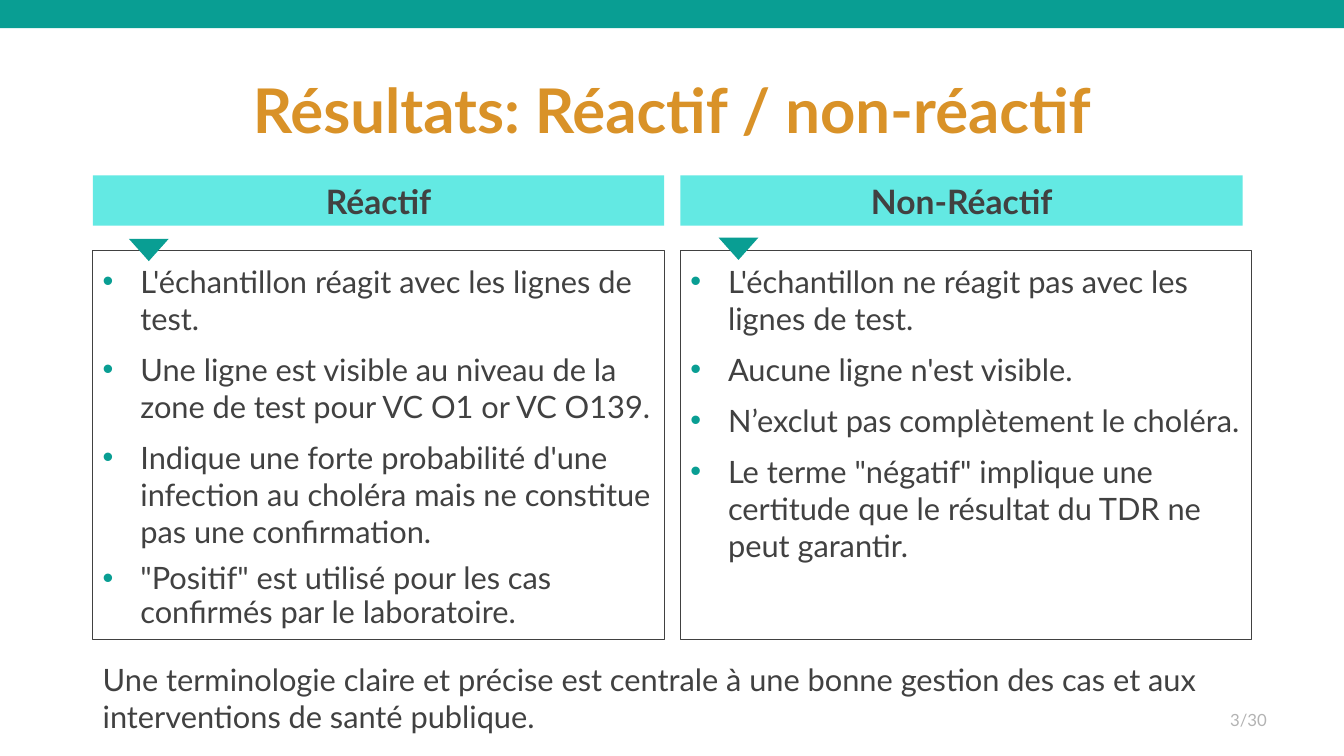
from dataclasses import dataclass

from lxml import etree
from pptx import Presentation
from pptx import util as u
from pptx.dml.color import RGBColor
from pptx.enum import shapes, text
from pptx.oxml import ns

TEAL = RGBColor(0x09, 0x9E, 0x93)
AQUA = RGBColor(0x63, 0xE9, 0xE3)
ORANGE = RGBColor(0xD9, 0x92, 0x28)
DARK = RGBColor(0x41, 0x41, 0x41)
GREY = RGBColor(0xB3, 0xB3, 0xB3)
FONT = "Lato"

SLIDE_WIDTH, SLIDE_HEIGHT = 33.87, 19.05
LEFT = 2.34
PANEL_WIDTH = 14.4
BULLET_INDENT = u.Cm(0.95)


@dataclass
class Panel:
    heading: str
    left: float
    heading_width: float
    marker_left: float
    marker_top: float
    points: list[str]
    last_spacing: float


PANELS = [
    Panel("Réactif", LEFT, PANEL_WIDTH, 3.25, 6.02, [
        "L'échantillon réagit avec les lignes de test.",
        "Une ligne est visible au niveau de la zone de test pour VC O1 or VC O139.",
        "Indique une forte probabilité d'une infection au choléra mais ne constitue "
        "pas une confirmation.",
        "\"Positif\" est utilisé pour les cas confirmés par le laboratoire.",
    ], 0.9),
    Panel("Non-Réactif", 17.15, 14.17, 18.11, 5.99, [
        "L'échantillon ne réagit pas avec les lignes de test.",
        "Aucune ligne n'est visible.",
        "N’exclut pas complètement le choléra.",
        "Le terme \"négatif\" implique une certitude que le résultat du TDR ne peut garantir.",
    ], 1.0),
]


def add_box(slide, kind, left: float, top: float, width: float, height: float,
            fill: RGBColor | None = None, line: RGBColor | None = None):
    shape = slide.shapes.add_shape(kind, u.Cm(left), u.Cm(top), u.Cm(width), u.Cm(height))
    shape.shadow.inherit = False
    if fill is None:
        shape.fill.background()
    else:
        shape.fill.solid()
        shape.fill.fore_color.rgb = fill
    if line is None:
        shape.line.fill.background()
    else:
        shape.line.color.rgb = line
        shape.line.width = u.Pt(0.75)
    return shape


def add_bullet(paragraph) -> None:
    properties = paragraph._p.get_or_add_pPr()
    properties.set("marL", str(BULLET_INDENT))
    properties.set("indent", str(-BULLET_INDENT))
    color = etree.SubElement(properties, ns.qn("a:buClr"))
    etree.SubElement(color, ns.qn("a:srgbClr"), val=str(TEAL))
    etree.SubElement(properties, ns.qn("a:buFont"), typeface="Arial")
    etree.SubElement(properties, ns.qn("a:buChar"), char="•")


def write(shape, lines: list[str], *, size: float, color: RGBColor = DARK,
          bold: bool = False, align=text.PP_ALIGN.LEFT, anchor=text.MSO_ANCHOR.TOP,
          bullets: bool = False, spacing: float = 1.0,
          last_spacing: float | None = None, inset_top: float = 0.13) -> None:
    frame = shape.text_frame
    frame.word_wrap = True
    frame.vertical_anchor = anchor
    frame.margin_top = u.Cm(inset_top)
    for index, line in enumerate(lines):
        paragraph = frame.add_paragraph() if index else frame.paragraphs[0]
        paragraph.text = line
        paragraph.alignment = align
        paragraph.line_spacing = spacing
        if index:
            paragraph.space_before = u.Pt(10)
        if bullets:
            add_bullet(paragraph)
        font = paragraph.font
        font.name, font.size, font.bold = FONT, u.Pt(size), bold
        font.color.rgb = color
    if last_spacing is not None:
        frame.paragraphs[-1].line_spacing = last_spacing


def add_text(slide, content: str, left: float, top: float, width: float, height: float,
             **style) -> None:
    box = slide.shapes.add_textbox(u.Cm(left), u.Cm(top), u.Cm(width), u.Cm(height))
    write(box, [content], **style)


def add_panel(slide, panel: Panel) -> None:
    """Draw the bulleted frame, its marker and its heading."""
    rectangle = shapes.MSO_SHAPE.RECTANGLE
    body = add_box(slide, rectangle, panel.left, 6.32, PANEL_WIDTH, 9.8, line=DARK)
    write(body, panel.points, size=22, bullets=True,
          last_spacing=panel.last_spacing, inset_top=0.3)
    marker = add_box(slide, shapes.MSO_SHAPE.ISOSCELES_TRIANGLE,
                     panel.marker_left, panel.marker_top, 1, 0.56, fill=TEAL)
    marker.rotation = 180
    heading = add_box(slide, rectangle, panel.left, 4.42, panel.heading_width, 1.27, fill=AQUA)
    write(heading, [panel.heading], size=24, bold=True, align=text.PP_ALIGN.CENTER)


def main() -> None:
    presentation = Presentation()
    presentation.slide_width = u.Cm(SLIDE_WIDTH)
    presentation.slide_height = u.Cm(SLIDE_HEIGHT)
    slide = presentation.slides.add_slide(presentation.slide_layouts[6])

    add_box(slide, shapes.MSO_SHAPE.RECTANGLE, 0, 0, SLIDE_WIDTH, 0.71, fill=TEAL)
    add_text(slide, "Résultats: Réactif / non-réactif", LEFT, 1.02, 29.21, 3.68,
             size=44, color=ORANGE, bold=True, spacing=0.9,
             align=text.PP_ALIGN.CENTER, anchor=text.MSO_ANCHOR.MIDDLE)
    for panel in PANELS:
        add_panel(slide, panel)
    add_text(slide, "Une terminologie claire et précise est centrale à une bonne gestion "
             "des cas et aux interventions de santé publique.",
             LEFT, 16.51, 29.9, 2.13, size=22)
    add_text(slide, "3/30", 24.56, 17.65, 7.62, 1.02, size=12, color=GREY, spacing=0.9,
             align=text.PP_ALIGN.RIGHT, anchor=text.MSO_ANCHOR.MIDDLE)
    presentation.save("out.pptx")


if __name__ == "__main__":
    main()
